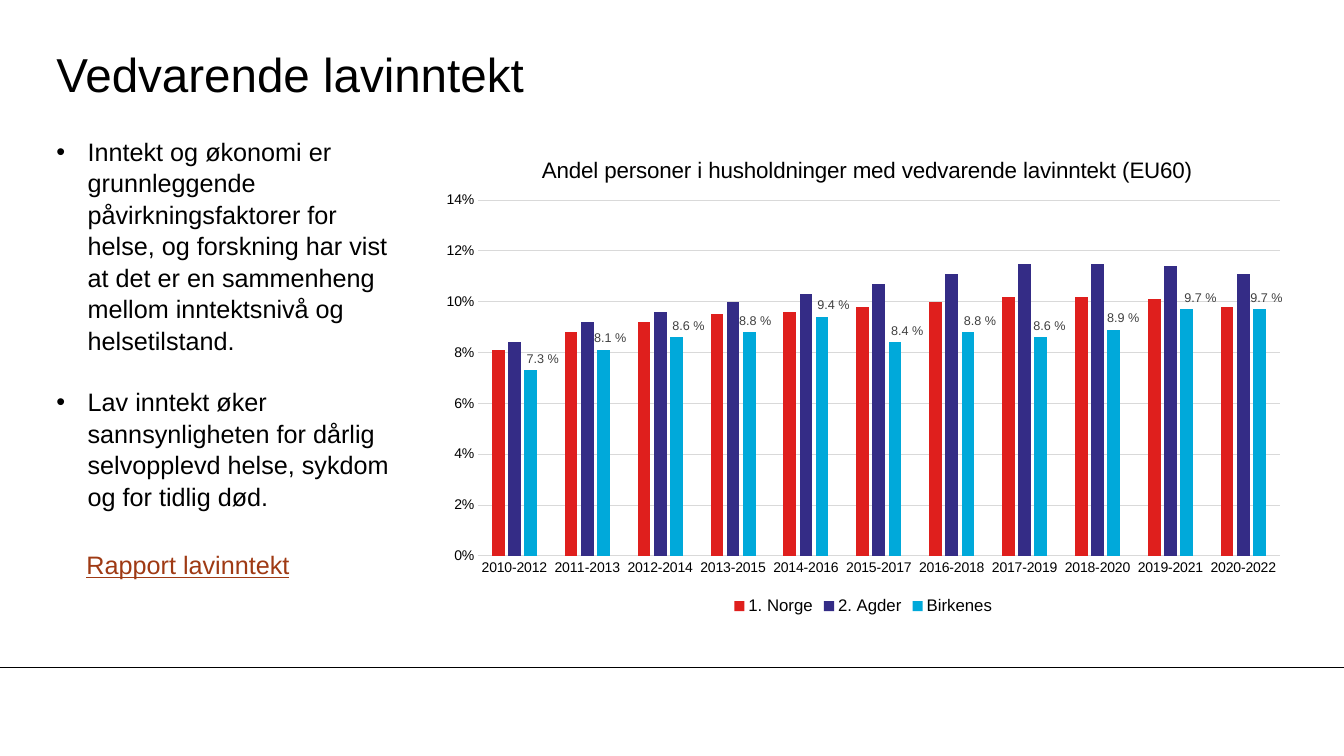
from dataclasses import dataclass

from lxml import etree
from pptx import Presentation
from pptx.chart.data import CategoryChartData
from pptx.dml.color import RGBColor
from pptx.enum.chart import XL_CHART_TYPE, XL_LEGEND_POSITION, XL_TICK_MARK
from pptx.enum.text import MSO_ANCHOR
from pptx.oxml import parse_xml
from pptx.oxml.ns import nsdecls, qn
from pptx.util import Cm, Pt


@dataclass(frozen=True)
class Theme:
    font: str = "Arial"
    text: str = "000000"
    link: str = "9F3A14"
    grid: str = "D9D9D9"
    label: str = "404040"
    series: tuple = ("DF1F1D", "342C86", "00A9DA")
    title_size: int = 34
    body_size: int = 18
    chart_title_size: int = 16
    legend_size: int = 12
    axis_size: int = 10
    label_size: int = 9
    hairline: float = 0.75


theme = Theme()


def set_font(font, size, color=theme.text):
    font.name = theme.font
    font.size = Pt(size)
    font.bold = False
    font.color.rgb = RGBColor.from_string(color)


def manual_layout(**values):
    """Return a chart layout element holding the given settings in order."""
    parts = "".join(f'<c:{tag} val="{val}"/>' for tag, val in values.items())
    return parse_xml(f'<c:layout {nsdecls("c")}><c:manualLayout>{parts}'
                     '</c:manualLayout></c:layout>')


prs = Presentation()
prs.slide_width, prs.slide_height = Cm(33.87), Cm(19.05)
s = prs.slides.add_slide(prs.slide_layouts[6])

# Footer rule
rule = s.shapes.add_connector(1, 0, Cm(16.81), prs.slide_width, Cm(16.81))
rule.line.color.rgb = RGBColor.from_string(theme.text)
rule.line.width = Pt(theme.hairline)
etree.SubElement(rule._element.spPr, qn("a:effectLst"))

# Title
title = s.shapes.add_textbox(Cm(1.42), Cm(0.91), Cm(28.2), Cm(1.9))
tf = title.text_frame
tf.word_wrap = True
tf.vertical_anchor = MSO_ANCHOR.MIDDLE
tf.margin_left = tf.margin_right = tf.margin_top = tf.margin_bottom = 0
tf.text = "Vedvarende lavinntekt"
set_font(tf.paragraphs[0].runs[0].font, theme.title_size)

# Bullets
bullets = [
    "Inntekt og økonomi er grunnleggende påvirkningsfaktorer for helse, og "
    "forskning har vist at det er en sammenheng mellom inntektsnivå og helsetilstand.",
    "Lav inntekt øker sannsynligheten for dårlig selvopplevd helse, sykdom "
    "og for tidlig død.",
]
body = s.shapes.add_textbox(Cm(1.17), Cm(3.28), Cm(8.89), Cm(9.5))
tf = body.text_frame
tf.word_wrap = True
for i, bullet in enumerate(bullets):
    p = tf.add_paragraph() if i else tf.paragraphs[0]
    p.text = bullet
    pPr = p._p.get_or_add_pPr()
    pPr.set("marL", str(Cm(0.79)))
    pPr.set("indent", str(-Cm(0.79)))
    etree.SubElement(pPr, qn("a:buFont")).set("typeface", theme.font)
    etree.SubElement(pPr, qn("a:buChar")).set("char", "•")
    p.line_spacing = 1.04
    if i:
        p.space_before = Pt(21.6)
    set_font(p.runs[0].font, theme.body_size)

# Report reference
report = s.shapes.add_textbox(Cm(1.93), Cm(13.72), Cm(6.73), Cm(1.02))
tf = report.text_frame
tf.word_wrap = True
tf.text = "Rapport lavinntekt"
r = tf.paragraphs[0].runs[0]
set_font(r.font, theme.body_size, theme.link)
r.font.underline = True

# Chart
percent_format = r"0.0\ %"
data = CategoryChartData(number_format=percent_format)
data.categories = [f"{year}-{year + 2}" for year in range(2010, 2021)]
shares = {
    "1. Norge": (8.1, 8.8, 9.2, 9.5, 9.6, 9.8, 10.0, 10.2, 10.2, 10.1, 9.8),
    "2. Agder": (8.4, 9.2, 9.6, 10.0, 10.3, 10.7, 11.1, 11.5, 11.5, 11.4, 11.1),
    "Birkenes": (7.3, 8.1, 8.6, 8.8, 9.4, 8.4, 8.8, 8.6, 8.9, 9.7, 9.7),
}
for name, percents in shares.items():
    data.add_series(name, [round(v / 100, 3) for v in percents])
chart = s.shapes.add_chart(XL_CHART_TYPE.COLUMN_CLUSTERED, Cm(10.82), Cm(3.28),
                           Cm(21.87), Cm(12.32), data).chart
set_font(chart.font, theme.axis_size)

chart.has_title = True
tf = chart.chart_title.text_frame
tf.text = "Andel personer i husholdninger med vedvarende lavinntekt (EU60)"
set_font(tf.paragraphs[0].runs[0].font, theme.chart_title_size)
chart_title = chart.chart_title._element
for old in chart_title.findall(qn("c:layout")):
    chart_title.remove(old)
chart_title.find(qn("c:tx")).addnext(
    manual_layout(xMode="edge", yMode="edge", x=0.125, y=0.045))

chart.has_legend = True
chart.legend.position = XL_LEGEND_POSITION.BOTTOM
chart.legend.include_in_layout = False
set_font(chart.legend.font, theme.legend_size)

plot_area = chart._chartSpace.chart.plotArea
for old in plot_area.findall(qn("c:layout")):
    plot_area.remove(old)
plot_area.insert(0, manual_layout(layoutTarget="inner", xMode="edge", yMode="edge",
                                  x=0.056, y=0.143, w=0.924, h=0.728))

for axis in (chart.category_axis, chart.value_axis):
    axis.major_tick_mark = axis.minor_tick_mark = XL_TICK_MARK.NONE
    set_font(axis.tick_labels.font, theme.axis_size)
axis = chart.value_axis
axis.minimum_scale, axis.maximum_scale, axis.major_unit = 0, 0.14, 0.02
axis.tick_labels.number_format = "0%"
axis.tick_labels.number_format_is_linked = False
axis.format.line.fill.background()
for line in (chart.category_axis.format.line, axis.major_gridlines.format.line):
    line.color.rgb = RGBColor.from_string(theme.grid)
    line.width = Pt(theme.hairline)

plot = chart.plots[0]
plot.vary_by_categories = False
plot.gap_width, plot.overlap = 219, -27
for series, color in zip(plot.series, theme.series):
    series.format.fill.solid()
    series.format.fill.fore_color.rgb = RGBColor.from_string(color)

# Value labels on the last series, nudged right of their columns
municipality = plot.series[-1]
labels = municipality.data_labels
labels.show_value = True
labels.number_format = percent_format
labels.number_format_is_linked = False
set_font(labels.font, theme.label_size, theme.label)
nudges = [0.014, 0.008, 0.014, 0.007, 0.013, 0.014, 0.014, 0.01, 0.011, 0.016, 0.008]
for i, nudge in enumerate(nudges):
    set_font(municipality.points[i].data_label.font, theme.label_size, theme.label)
number_format = labels._element.find(qn("c:numFmt"))
for label, nudge in zip(labels._element.findall(qn("c:dLbl")), nudges):
    layout = manual_layout(x=nudge, y=0)
    label.find(qn("c:idx")).addnext(layout)
    layout.addnext(parse_xml(etree.tostring(number_format)))

prs.save("out.pptx")
